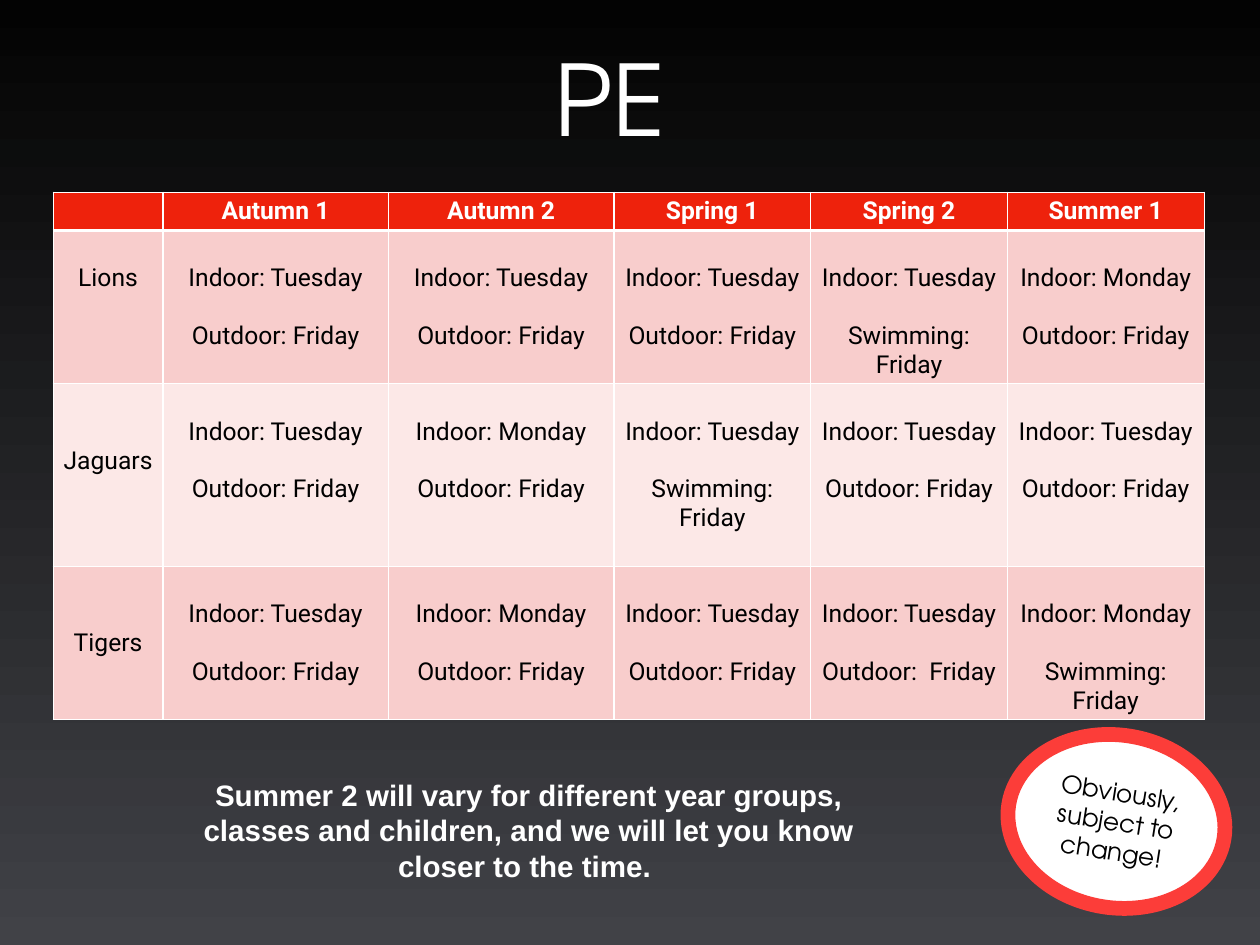
import lxml.etree
import pptx
import pptx.dml.color
import pptx.enum.shapes
import pptx.enum.text
import pptx.oxml.ns
import pptx.util
from dataclasses import dataclass

Inches = pptx.util.Inches
Pt = pptx.util.Pt
ANCHOR = pptx.enum.text.MSO_ANCHOR


def rgb(value):
    return pptx.dml.color.RGBColor.from_string(value)


@dataclass(frozen=True)
class Theme:
    bg_top: str = "030303"
    bg_bottom: str = "414247"
    white: str = "FFFFFF"
    black: str = "000000"
    header: str = "EE220C"
    bands: tuple = ("F8CDCC", "FCE8E7")
    badge_line: str = "FC3D39"
    display: str = "TeX Gyre Adventor"
    body: str = "Roboto"
    note: str = "Arial"
    title_size: int = 80
    body_size: int = 20
    note_size: int = 24


THEME = Theme()
LINE = 0.327  # height of one line of body text, inches
PAD = 0.05

TUE, MON = "Indoor: Tuesday", "Indoor: Monday"
FRI, SWIM = "Outdoor: Friday", "Swimming: Friday"
TERMS = ["Autumn 1", "Autumn 2", "Spring 1", "Spring 2", "Summer 1"]
# Class name, lines above the name, row height, sessions per term
CLASSES = [
    ("Lions", 1, 1.73,
     [(TUE, FRI), (TUE, FRI), (TUE, FRI), (TUE, SWIM), (MON, FRI)]),
    ("Jaguars", 2, 2.06,
     [(TUE, FRI), (MON, FRI), (TUE, SWIM), (TUE, FRI), (TUE, FRI)]),
    ("Tigers", 2, 1.73,
     [(TUE, FRI), (MON, FRI), (TUE, FRI), (TUE, "Outdoor:  Friday"),
      (MON, SWIM)]),
]
COL_WIDTHS = [1.24, 2.54, 2.55, 2.22, 2.22, 2.22]
HEADER_HEIGHT = 0.43


def apply(obj, values):
    for name, value in values.items():
        setattr(obj, name, value)


def write(tf, lines, font, size, color, bold=False, gap=0):
    """Fill a text frame with centred paragraphs, gap inches apart."""
    for i, line in enumerate(lines):
        p = tf.paragraphs[0] if i == 0 else tf.add_paragraph()
        p.alignment = pptx.enum.text.PP_ALIGN.CENTER
        if i:
            p.space_before = Inches(gap)
        r = p.add_run()
        r.text = line
        apply(r.font, {"name": font, "size": Pt(size), "bold": bold})
        r.font.color.rgb = rgb(color)


def set_frame(tf, anchor):
    inset = Inches(0.06)
    apply(tf, {"word_wrap": True, "vertical_anchor": anchor,
               "margin_left": inset, "margin_right": inset,
               "margin_top": inset, "margin_bottom": inset})


def add_background(slide):
    fill = slide.background.fill
    fill.gradient()
    fill.gradient_angle = 270
    for stop, color in zip(fill.gradient_stops, (THEME.bg_top, THEME.bg_bottom)):
        stop.color.rgb = rgb(color)


def add_text(slide, box, text, anchor, font, size, bold=False):
    sp = slide.shapes.add_textbox(*map(Inches, box))
    set_frame(sp.text_frame, anchor)
    write(sp.text_frame, [text], font, size, THEME.white, bold)


def set_borders(cell, widths):
    tc_pr = cell._tc.get_or_add_tcPr()
    qn = pptx.oxml.ns.qn
    for side, width in widths.items():
        ln = lxml.etree.SubElement(tc_pr, qn("a:ln" + side), w=str(Pt(width)))
        fill = lxml.etree.SubElement(ln, qn("a:solidFill"))
        lxml.etree.SubElement(fill, qn("a:srgbClr"), val=THEME.white)


def fill_cell(cell, lines, color, text_color, bold=False, lines_above=0,
              bottom=1, top=1):
    set_borders(cell, {"L": 1, "R": 1, "T": top, "B": bottom})
    cell.fill.solid()
    cell.fill.fore_color.rgb = rgb(color)
    apply(cell, {"margin_top": Inches(PAD + lines_above * LINE),
                 "margin_bottom": Inches(0.03),
                 "vertical_anchor": ANCHOR.TOP})
    write(cell.text_frame, lines, THEME.body, THEME.body_size, text_color,
          bold, gap=LINE)


def add_timetable(slide, box):
    table = slide.shapes.add_table(
        len(CLASSES) + 1, len(COL_WIDTHS), *map(Inches, box)).table
    table.horz_banding = False
    for col, width in zip(table.columns, COL_WIDTHS):
        col.width = Inches(width)
    heights = [HEADER_HEIGHT] + [c[2] for c in CLASSES]
    for row, height in zip(table.rows, heights):
        row.height = Inches(height)

    # Header row
    for c, term in enumerate([""] + TERMS):
        fill_cell(table.cell(0, c), [term] if term else [], THEME.header,
                  THEME.white, bold=True, bottom=3)

    # One row per class
    for r, (name, above, _, sessions) in enumerate(CLASSES, 1):
        band = THEME.bands[(r - 1) % 2]
        top = 3 if r == 1 else 1
        fill_cell(table.cell(r, 0), [name], band, THEME.black,
                  lines_above=above, top=top)
        for c, lines in enumerate(sessions, 1):
            fill_cell(table.cell(r, c), lines, band, THEME.black,
                      lines_above=1, top=top)


def add_badge(slide, box):
    sp = slide.shapes.add_shape(
        pptx.enum.shapes.MSO_SHAPE.OVAL, *map(Inches, box))
    sp.rotation = 9
    sp.shadow.inherit = False
    sp.fill.solid()
    sp.fill.fore_color.rgb = rgb(THEME.white)
    sp.line.color.rgb = rgb(THEME.badge_line)
    sp.line.width = Pt(12)
    set_frame(sp.text_frame, ANCHOR.MIDDLE)
    write(sp.text_frame, ["Obviously, subject to change!"], THEME.display,
          THEME.body_size, THEME.black)


def main():
    prs = pptx.Presentation()
    apply(prs, {"slide_width": Inches(14.22), "slide_height": Inches(10.67)})
    slide = prs.slides.add_slide(prs.slide_layouts[6])
    add_background(slide)
    add_text(slide, (1.16, 0.24, 11.44, 1.58), "PE", ANCHOR.BOTTOM,
             THEME.display, THEME.title_size)
    add_timetable(slide, (0.6, 2.17, 13, 5.95))
    add_badge(slide, (11.37, 8.3, 2.46, 1.95))
    add_text(slide, (1.79, 8.71, 8.35, 1.32),
             "Summer 2 will vary for different year groups, classes and "
             "children, and we will let you know closer to the time. ",
             ANCHOR.MIDDLE, THEME.note, THEME.note_size, bold=True)
    prs.save("out.pptx")


if __name__ == "__main__":
    main()
